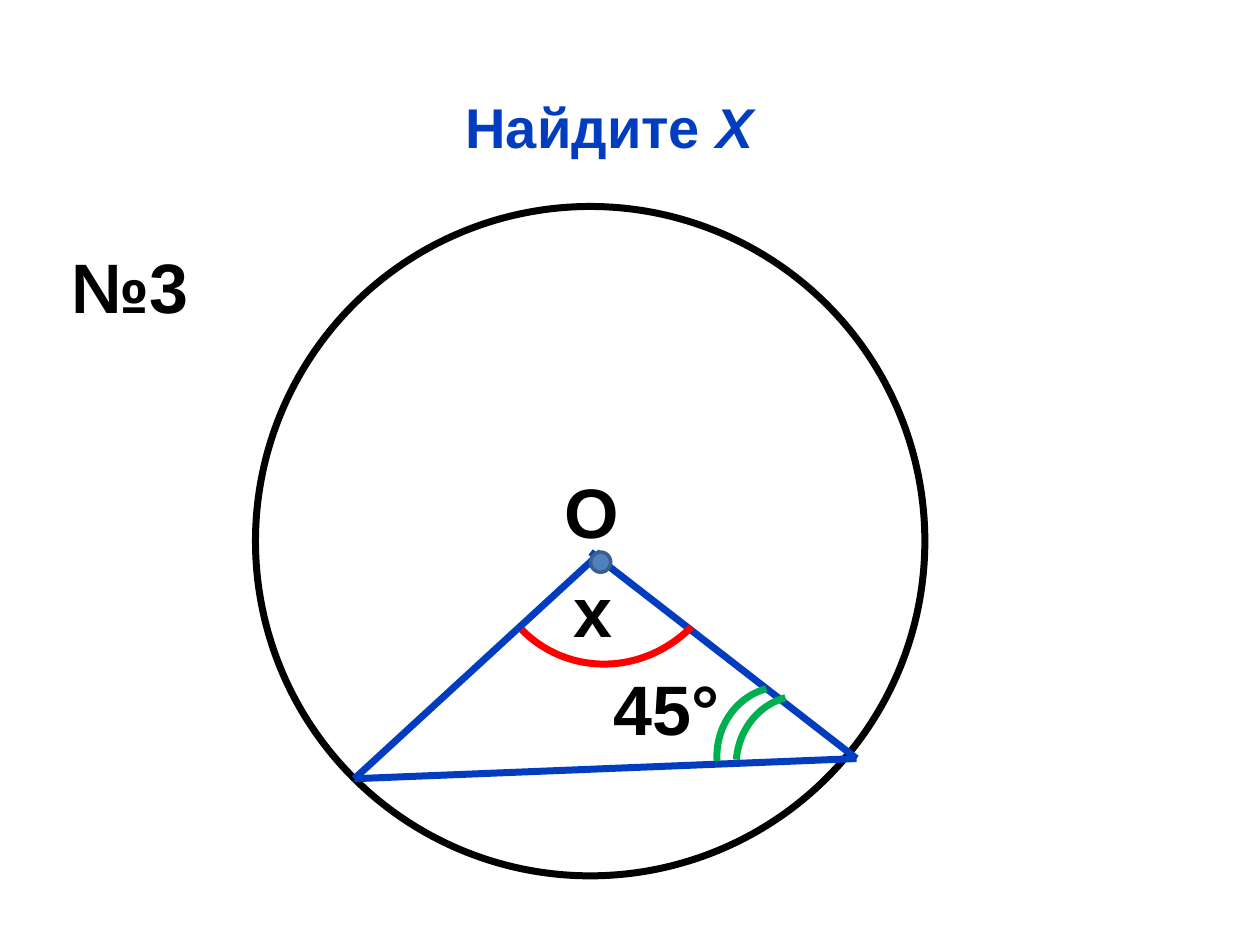
from pptx import Presentation
from pptx.dml.color import RGBColor
from pptx.enum import shapes, text
from pptx.util import Pt
from lxml import etree

THEME = {
    "blue": "033DBF", "black": "000000", "white": "FFFFFF", "green": "00B050",
    "red": "FF0000", "dot": "4F81BD", "dot_edge": "3A5F8C",
    "font": "Arial", "title": 32, "label": 40, "stroke": 4, "dot_stroke": 2,
}

TITLE = [("Найдите ", False), ("Х", True)]
TITLE_BOX = (54, 49, 588.5, 46.5)
LABELS = [
    ("x", 320.5, 320.5, 50.5),
    ("45°", 343.5, 376.5, 96),
    ("№3", 34, 135.5, 101.5),
    ("О", 315.5, 264, 73.5),
]
LABEL_HEIGHT = 55.5

CIRCLE = (146, 118, 382.5, 382.5)
CENTER_DOT = (337.5, 315.5, 11.5, 11.5)
LEFT, RIGHT = (202.5, 445), (489.5, 433.5)
SIDES = [(RIGHT, (337.5, 315.5)), (RIGHT, LEFT), ((343.5, 315.5), LEFT)]
ARCS = [
    ((407.5, 394.5, 78.5, 74), 276.7, 258.16, 340.16, "green"),
    ((418.5, 399.5, 78.5, 74), 276.7, 267.08, 340.16, "green"),
    ((277, 242, 141, 135.5), 121.8, 283.79, 12.9, "red"),
]


def color(name):
    return RGBColor.from_string(THEME[name])


def set_line(sp, name, width=THEME["stroke"]):
    sp.line.color.rgb = color(name)
    sp.line.width = Pt(width)


def add_preset(s, kind, box, fill, line, width=THEME["stroke"]):
    sp = s.shapes.add_shape(kind, *map(Pt, box))
    sp.shadow.inherit = False
    if fill:
        sp.fill.solid()
        sp.fill.fore_color.rgb = color(fill)
    else:
        sp.fill.background()
    set_line(sp, line, width)
    return sp


def add_side(s, start, end):
    sp = s.shapes.add_connector(
        shapes.MSO_CONNECTOR.STRAIGHT, *map(Pt, start + end))
    set_line(sp, "blue")
    ns = "http://schemas.openxmlformats.org/drawingml/2006/main"
    etree.SubElement(sp._element.spPr, "{%s}effectLst" % ns)


def add_arc(s, box, rotation, start, end, line):
    sp = add_preset(s, shapes.MSO_SHAPE.ARC, box, None, line)
    sp.rotation = rotation
    for i, degrees in enumerate((start, end)):
        sp.adjustments[i] = degrees * 0.6


def add_text(s, box, runs, size, fill, align, anchor):
    tf = s.shapes.add_textbox(*map(Pt, box)).text_frame
    tf.word_wrap = True
    tf.vertical_anchor = anchor
    p = tf.paragraphs[0]
    p.alignment = align
    for words, italic in runs:
        r = p.add_run()
        r.text = words
        r.font.name = THEME["font"]
        r.font.size = Pt(THEME[size])
        r.font.bold = True
        r.font.italic = italic
        r.font.color.rgb = color(fill)


def main():
    prs = Presentation()
    prs.slide_width, prs.slide_height = Pt(720), Pt(540)
    s = prs.slides.add_slide(prs.slide_layouts[6])
    add_text(s, TITLE_BOX, TITLE, "title", "blue",
             text.PP_ALIGN.CENTER, text.MSO_ANCHOR.MIDDLE)
    add_preset(s, shapes.MSO_SHAPE.OVAL, CIRCLE, "white", "black")
    for start, end in SIDES:
        add_side(s, start, end)
    for arc in ARCS:
        add_arc(s, *arc)
    for words, x, y, width in LABELS:
        add_text(s, (x, y, width, LABEL_HEIGHT), [(words, False)], "label", "black",
                 text.PP_ALIGN.LEFT, text.MSO_ANCHOR.TOP)
    add_preset(s, shapes.MSO_SHAPE.OVAL, CENTER_DOT, "dot", "dot_edge",
               THEME["dot_stroke"])
    prs.save("out.pptx")


if __name__ == "__main__":
    main()
